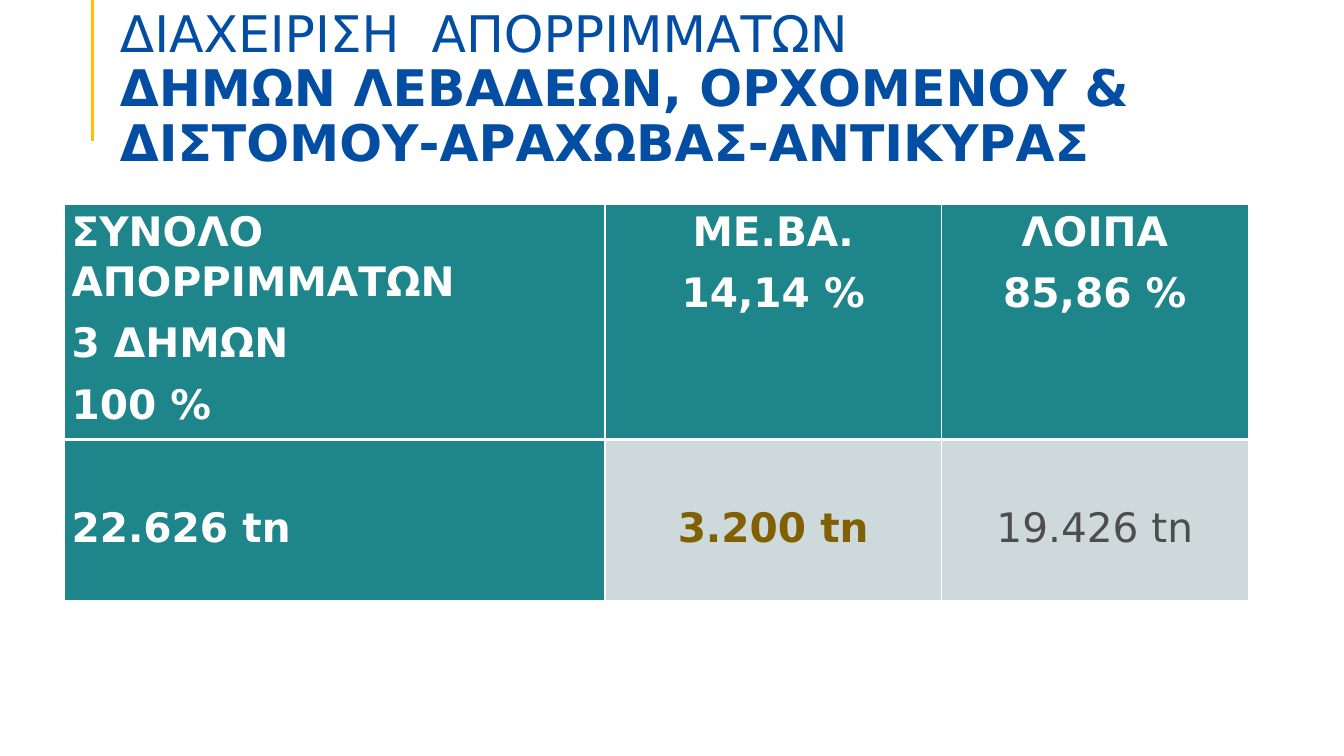
import pptx
import pptx.dml.color
import pptx.enum.shapes
import pptx.enum.text
import pptx.oxml
import pptx.oxml.ns
import pptx.util
from dataclasses import dataclass

EMU_PER_PX = 9144  # 100 px to the inch


@dataclass(frozen=True)
class Theme:
    font: str = "DejaVu Sans"
    title_size: int = 36
    table_size: int = 29
    blue: str = "034EA2"
    amber: str = "FFC000"
    teal: str = "1E858B"
    pale: str = "CDD9DA"
    white: str = "FFFFFF"
    brown: str = "806000"
    gray: str = "4D4D4D"


THEME = Theme()


def px(length):
    return pptx.util.Emu(length * EMU_PER_PX)


def rgb(color):
    return pptx.dml.color.RGBColor.from_string(color)


def add_run(paragraph, text, size, color, bold):
    run = paragraph.add_run()
    run.text = text
    run.font.name = THEME.font
    run.font.size = pptx.util.Pt(size)
    run.font.bold = bold
    run.font.color.rgb = rgb(color)


def set_margins(target, left, top, right, bottom):
    target.margin_left, target.margin_top = px(left), px(top)
    target.margin_right, target.margin_bottom = px(right), px(bottom)


def add_accent_line(slide, x, top, bottom):
    connector = slide.shapes.add_connector(
        pptx.enum.shapes.MSO_CONNECTOR.STRAIGHT, px(x), px(top), px(x), px(bottom))
    connector.line.color.rgb = rgb(THEME.amber)
    connector.line.width = pptx.util.Pt(2.25)
    properties = connector._element.spPr
    properties.append(pptx.oxml.parse_xml(
        f"<a:effectLst {pptx.oxml.ns.nsdecls('a')}/>"))


def add_title(slide, light_text, bold_text):
    box = slide.shapes.add_textbox(px(109), px(11), px(1158), px(160))
    frame = box.text_frame
    frame.word_wrap = True
    frame.vertical_anchor = pptx.enum.text.MSO_ANCHOR.BOTTOM
    set_margins(frame, 10, 5, 10, 0)
    paragraph = frame.paragraphs[0]
    paragraph.line_spacing = 0.9
    add_run(paragraph, light_text, THEME.title_size, THEME.blue, False)
    paragraph.add_line_break()
    add_run(paragraph, bold_text, THEME.title_size, THEME.blue, True)


def set_borders(cell, widths):
    properties = cell._tc.get_or_add_tcPr()
    for index, (side, width) in enumerate(widths.items()):
        properties.insert(index, pptx.oxml.parse_xml(
            f"<a:ln{side} {pptx.oxml.ns.nsdecls('a')} w=\"{pptx.util.Pt(width)}\">"
            f"<a:solidFill><a:srgbClr val=\"{THEME.white}\"/></a:solidFill></a:ln{side}>"))


def fill_cell(cell, lines, fill, color, bold, centered, top_margin):
    cell.fill.solid()
    cell.fill.fore_color.rgb = rgb(fill)
    set_margins(cell, 7, top_margin, 7, 0)
    frame = cell.text_frame
    for index, line in enumerate(lines):
        paragraph = frame.add_paragraph() if index else frame.paragraphs[0]
        if centered:
            paragraph.alignment = pptx.enum.text.PP_ALIGN.CENTER
        paragraph.line_spacing = 1.06
        paragraph.space_after = pptx.util.Pt(8)
        add_run(paragraph, line, THEME.table_size, color, bold)


def add_waste_table(slide, headers, amounts):
    column_widths, row_heights = (536, 334, 304), (233, 160)
    table = slide.shapes.add_table(
        len(row_heights), len(column_widths), px(64), px(203),
        px(sum(column_widths)), px(sum(row_heights))).table
    table.horz_banding = False
    for column, width in zip(table.columns, column_widths):
        column.width = px(width)
    for row, height in zip(table.rows, row_heights):
        row.height = px(height)

    for index, (header, amount) in enumerate(zip(headers, amounts)):
        header_cell, amount_cell = table.cell(0, index), table.cell(1, index)
        text, fill, color, bold = amount
        fill_cell(header_cell, header, THEME.teal, THEME.white, True, index > 0, 1)
        fill_cell(amount_cell, [text], fill, color, bold, index > 0, 62)
        # The rule between the two rows is the heavy one
        set_borders(header_cell, {"L": 1, "R": 1, "T": 1, "B": 3})
        set_borders(amount_cell, {"L": 1, "R": 1, "T": 3, "B": 1})


def main():
    presentation = pptx.Presentation()
    presentation.slide_width, presentation.slide_height = px(1333), px(750)
    slide = presentation.slides.add_slide(presentation.slide_layouts[6])

    # Heading
    add_accent_line(slide, 92, 0, 140)
    add_title(slide, "ΔΙΑΧΕΙΡΙΣΗ  ΑΠΟΡΡΙΜΜΑΤΩΝ",
              "ΔΗΜΩΝ ΛΕΒΑΔΕΩΝ, ΟΡΧΟΜΕΝΟΥ & ΔΙΣΤΟΜΟΥ-ΑΡΑΧΩΒΑΣ-ΑΝΤΙΚΥΡΑΣ")

    # Waste quantities
    add_waste_table(
        slide,
        headers=[
            ["ΣΥΝΟΛΟ ΑΠΟΡΡΙΜΜΑΤΩΝ", "3 ΔΗΜΩΝ", "100 %"],
            ["ΜΕ.ΒΑ.", "14,14 %"],
            ["ΛΟΙΠΑ", "85,86 %"],
        ],
        amounts=[
            ("22.626 tn", THEME.teal, THEME.white, True),
            ("3.200 tn", THEME.pale, THEME.brown, True),
            ("19.426 tn", THEME.pale, THEME.gray, False),
        ])

    presentation.save("out.pptx")


if __name__ == "__main__":
    main()
